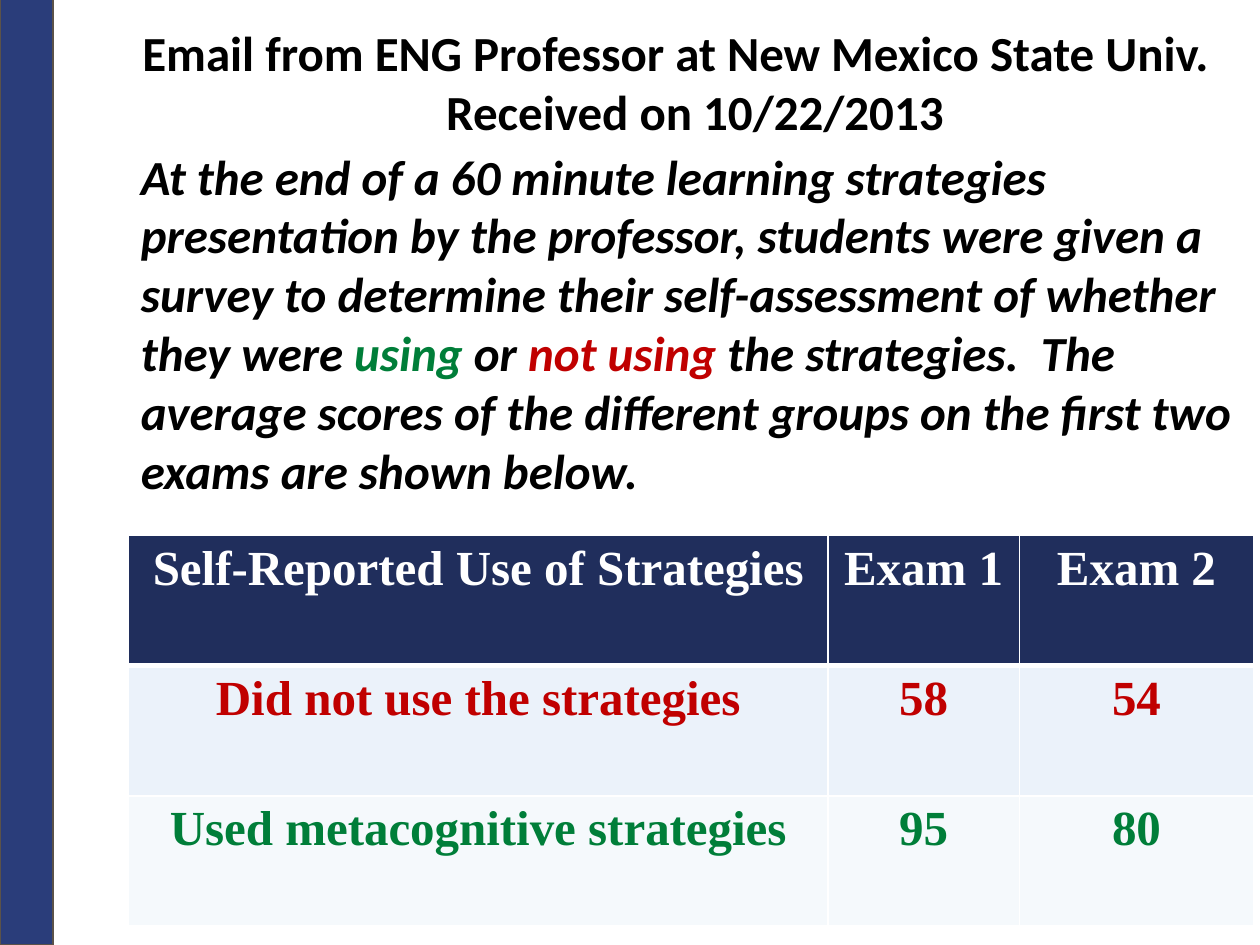
import pptx
import pptx.dml.color
import pptx.enum.shapes
import pptx.enum.text
import pptx.oxml
import pptx.oxml.ns
import pptx.util

COLORS = {
    "text": "000000", "white": "FFFFFF", "used": "007E39", "unused": "C00000",
    "bar": "2A3D7A", "bar_line": "5B5249",
    "header": "202E5C", "row_1": "EBF2FA", "row_2": "F5F9FC",
}
Inches, Pt = pptx.util.Inches, pptx.util.Pt
ALIGN = pptx.enum.text.PP_ALIGN
LEFT = Inches(1.02)


def rgb(name):
    return pptx.dml.color.RGBColor.from_string(COLORS[name])


def set_font(font, name, color):
    font.name, font.size, font.bold = name, Pt(28), True
    font.color.rgb = rgb(color)


prs = pptx.Presentation()
prs.slide_width, prs.slide_height = Inches(10), Inches(7.5)
s = prs.slides.add_slide(prs.slide_layouts[5])

# Body text
sp = s.shapes.add_textbox(LEFT, Inches(1.11), Inches(9), Inches(5.55))
tf = sp.text_frame
tf.word_wrap = True
p = tf.paragraphs[0]
p.font.italic = True
set_font(p.font, "Calibri", "text")
for text, color in [
    ("At the end of a 60 minute learning strategies presentation by the professor, "
     "students were given a survey to determine their self-assessment of whether "
     "they were ", "text"),
    ("using", "used"),
    (" or ", "text"),
    ("not using ", "unused"),
    ("the strategies.  The average scores of the different groups on the first two "
     "exams are shown below.", "text"),
]:
    r = p.add_run()
    r.text = text
    r.font.color.rgb = rgb(color)

# Title
title = s.shapes.title
title.left, title.top = Inches(1.03), Inches(0.13)
title.width, title.height = Inches(8.97), Inches(1.04)
tf = title.text_frame
tf.text = "Email from ENG Professor at New Mexico State Univ.\nReceived on 10/22/2013"
tf.word_wrap = True
tf.auto_size = pptx.enum.text.MSO_AUTO_SIZE.NONE
tf.vertical_anchor = pptx.enum.text.MSO_ANCHOR.TOP
for p, align in zip(tf.paragraphs, (ALIGN.LEFT, ALIGN.CENTER)):
    p.alignment = align
    set_font(p.font, "Calibri", "text")

# Exam scores: cell texts, text colour, fill
rows = [
    (("Self-Reported Use of Strategies", "Exam 1", "Exam 2"), "white", "header"),
    (("Did not use the strategies", "58", "54"), "unused", "row_1"),
    (("Used metacognitive strategies", "95", "80"), "used", "row_2"),
]
col_widths = (5.55, 1.52, 1.86)
table = s.shapes.add_table(len(rows), len(col_widths), LEFT, Inches(4.25),
                           Inches(sum(col_widths)), Inches(3.1)).table
for column, width in zip(table.columns, col_widths):
    column.width = Inches(width)
for i, (texts, color, fill) in enumerate(rows):
    for j, text in enumerate(texts):
        cell = table.cell(i, j)
        cell.text = text
        p = cell.text_frame.paragraphs[0]
        p.alignment = ALIGN.CENTER
        set_font(p.font, "Times New Roman", color)
        tc_pr = cell._tc.get_or_add_tcPr()
        for side in "LRTB":
            thick = (i, side) in ((0, "B"), (1, "T"))
            tc_pr.append(pptx.oxml.parse_xml(
                f'<a:ln{side} {pptx.oxml.ns.nsdecls("a")} w="{Pt(3 if thick else 1)}">'
                f'<a:solidFill><a:srgbClr val="{COLORS["white"]}"/></a:solidFill>'
                f'</a:ln{side}>'))
        cell.fill.solid()
        cell.fill.fore_color.rgb = rgb(fill)

# Side bar
bar = s.shapes.add_shape(pptx.enum.shapes.MSO_SHAPE.RECTANGLE,
                         0, Inches(-0.08), Inches(0.42), Inches(7.58))
bar.shadow.inherit = False
bar.fill.solid()
bar.fill.fore_color.rgb = rgb("bar")
bar.line.color.rgb = rgb("bar_line")
bar.line.width = Pt(0.75)

prs.save("out.pptx")
